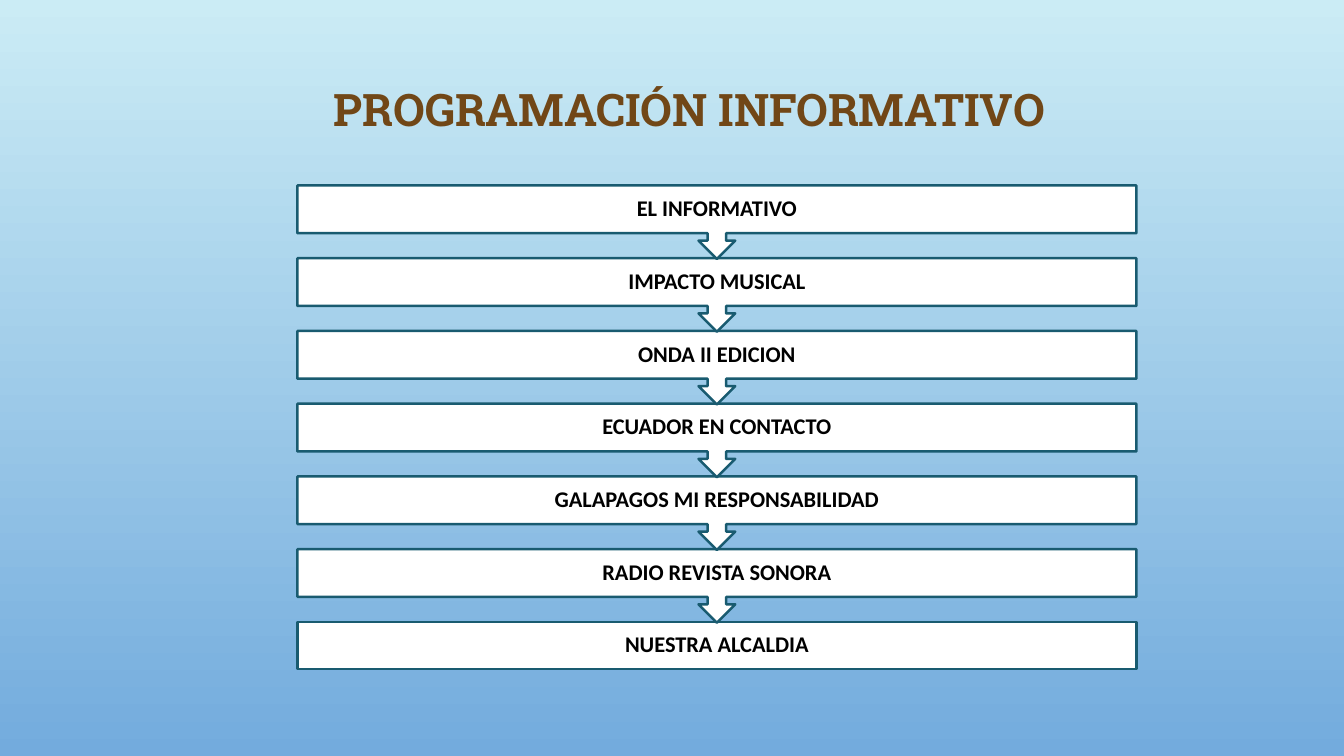
from dataclasses import dataclass

import pptx
import pptx.dml.color
import pptx.enum.shapes
import pptx.enum.text
import pptx.util

Inches = pptx.util.Inches
Pt = pptx.util.Pt
MSO_SHAPE = pptx.enum.shapes.MSO_SHAPE
PP_ALIGN = pptx.enum.text.PP_ALIGN
MSO_ANCHOR = pptx.enum.text.MSO_ANCHOR

PROGRAMS = [
    "EL INFORMATIVO",
    "IMPACTO MUSICAL",
    "ONDA II EDICION",
    "ECUADOR EN CONTACTO",
    "GALAPAGOS MI RESPONSABILIDAD",
    "RADIO REVISTA SONORA",
    "NUESTRA ALCALDIA",
]
LEFT, WIDTH = 2.95, 8.32
FIRST_TOP, LAST_TOP = 1.84, 6.17
BAR_HEIGHT, CALLOUT_HEIGHT = 0.47, 0.73


@dataclass
class Step:
    label: str
    top: float
    height: float
    outline: MSO_SHAPE


def rgb(hex_color: str) -> pptx.dml.color.RGBColor:
    return pptx.dml.color.RGBColor.from_string(hex_color)


def write(frame, text: str, font_name: str, size: float, color: str) -> None:
    frame.vertical_anchor = MSO_ANCHOR.MIDDLE
    paragraph = frame.paragraphs[0]
    paragraph.alignment = PP_ALIGN.CENTER
    paragraph.line_spacing = 0.9
    run = paragraph.add_run()
    run.text = text
    run.font.name = font_name
    run.font.size = Pt(size)
    run.font.bold = True
    run.font.color.rgb = rgb(color)


def draw_step(slide, step: Step) -> None:
    bar = slide.shapes.add_shape(step.outline, Inches(LEFT), Inches(step.top),
                                 Inches(WIDTH), Inches(step.height))
    bar.shadow.inherit = False
    bar.fill.solid()
    bar.fill.fore_color.rgb = rgb("FFFFFF")
    bar.line.color.rgb = rgb("195B70")
    bar.line.width = Pt(1.75)
    frame = bar.text_frame
    frame.word_wrap = True
    frame.margin_left = frame.margin_right = Inches(0.12)
    frame.margin_top = frame.margin_bottom = Inches(0.05)
    write(frame, step.label, "Calibri", 16, "000000")


def main() -> None:
    deck = pptx.Presentation()
    deck.slide_width, deck.slide_height = Inches(13.33), Inches(7.5)
    slide = deck.slides.add_slide(deck.slide_layouts[5])

    # Sky gradient, light at the top
    sky = slide.background.fill
    sky.gradient()
    sky.gradient_angle = 270
    for stop, color, position in zip(sky.gradient_stops, ("CBECF5", "73ABDD"), (0, 1)):
        stop.color.rgb = rgb(color)
        stop.position = position

    # Heading
    heading = slide.shapes.title
    heading.left, heading.top = Inches(2.95), Inches(0.79)
    heading.width, heading.height = Inches(7.78), Inches(0.64)
    heading.text_frame.word_wrap = False
    write(heading.text_frame, "PROGRAMACIÓN INFORMATIVO", "Roboto Slab", 32, "714717")

    # Programme flow: the last step is a plain bar, the others point down to the next
    last = len(PROGRAMS) - 1
    pitch = (LAST_TOP - FIRST_TOP) / last
    steps = [
        Step(label, FIRST_TOP + index * pitch,
             BAR_HEIGHT if index == last else CALLOUT_HEIGHT,
             MSO_SHAPE.RECTANGLE if index == last else MSO_SHAPE.DOWN_ARROW_CALLOUT)
        for index, label in enumerate(PROGRAMS)
    ]
    for step in reversed(steps):
        draw_step(slide, step)

    deck.save("out.pptx")


if __name__ == "__main__":
    main()
